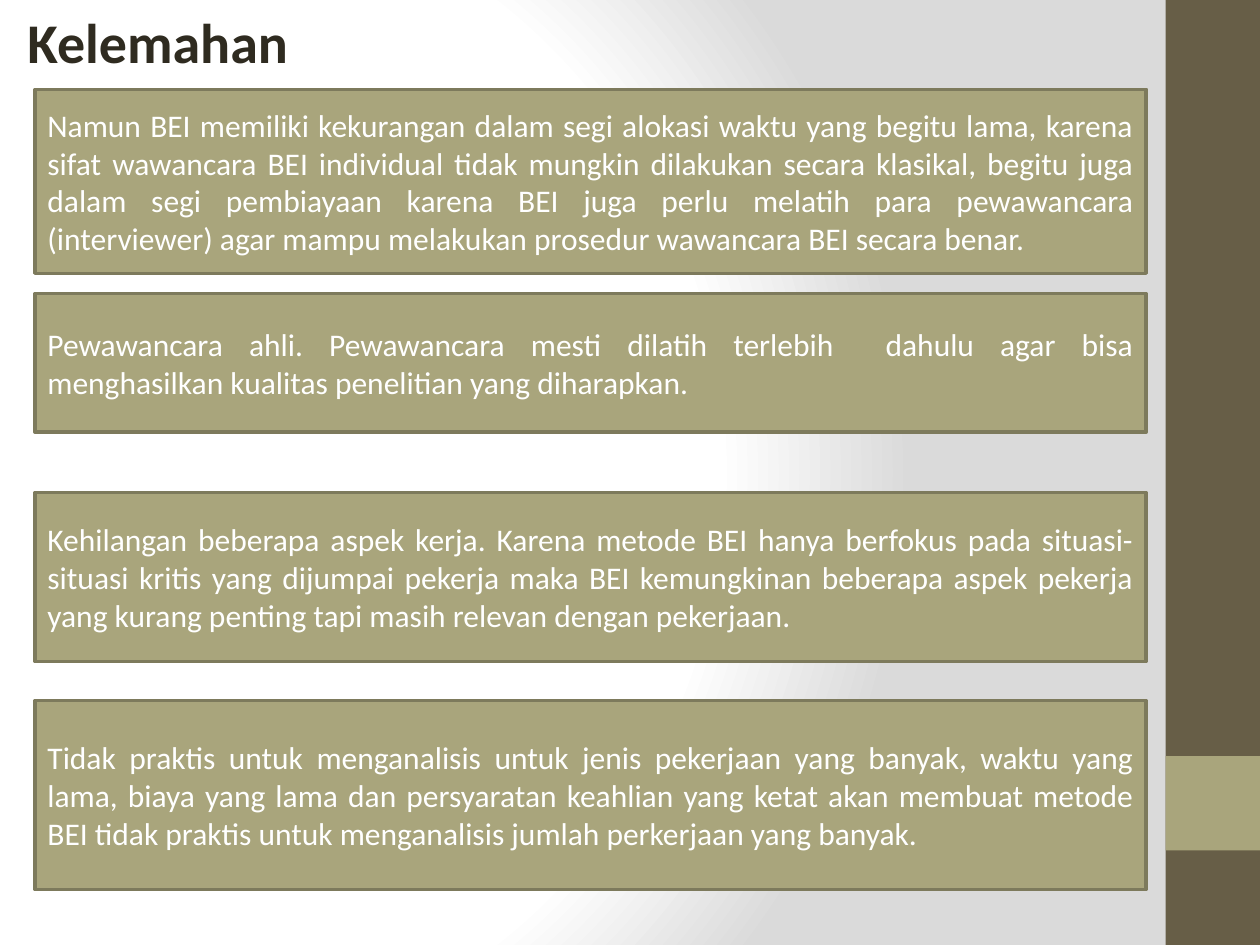
from pptx import Presentation
from pptx.dml.color import RGBColor
from pptx.enum.shapes import MSO_SHAPE
from pptx.enum.text import MSO_ANCHOR, PP_ALIGN
from pptx.oxml import parse_xml
from pptx.oxml.ns import nsdecls
from pptx.util import Pt

BROWN = RGBColor(0x67, 0x5E, 0x47)
OLIVE = RGBColor(0xA9, 0xA5, 0x7C)
OUTLINE = RGBColor(0x7D, 0x7A, 0x5C)
DARK = RGBColor(0x2F, 0x2B, 0x20)
WHITE = RGBColor(0xFF, 0xFF, 0xFF)
SILVER = RGBColor(0xDA, 0xDA, 0xDA)

WIDTH, HEIGHT = 720, 540
SIDEBAR = 54

# Top, height and text of each weakness
WEAKNESSES = [
    (51.1, 105.1,
     "Namun BEI memiliki kekurangan dalam segi alokasi waktu yang begitu lama, "
     "karena sifat wawancara BEI individual tidak mungkin dilakukan secara klasikal, "
     "begitu juga dalam segi pembiayaan karena BEI juga perlu melatih para pewawancara "
     "(interviewer) agar mampu melakukan prosedur wawancara BEI secara benar."),
    (167.8, 79.2,
     "Pewawancara ahli. Pewawancara mesti dilatih terlebih  dahulu agar bisa "
     "menghasilkan kualitas penelitian yang diharapkan."),
    (281.5, 96.5,
     "Kehilangan beberapa aspek kerja. Karena metode BEI hanya berfokus pada "
     "situasi-situasi kritis yang dijumpai pekerja maka BEI kemungkinan beberapa aspek "
     "pekerja yang kurang penting tapi masih relevan dengan pekerjaan."),
    (400.3, 108,
     "Tidak praktis untuk menganalisis untuk jenis pekerjaan yang banyak, waktu yang "
     "lama, biaya yang lama dan persyaratan keahlian yang ketat akan membuat metode BEI "
     "tidak praktis untuk menganalisis jumlah perkerjaan yang banyak."),
]


def write_text(shape, text, size=18, color=WHITE, bold=False,
               align=PP_ALIGN.LEFT, anchor=MSO_ANCHOR.TOP):
    frame = shape.text_frame
    frame.word_wrap = True
    frame.vertical_anchor = anchor
    para = frame.paragraphs[0]
    para.alignment = align
    span = para.add_run()
    span.text = text
    span.font.name = "Calibri"
    span.font.size = Pt(size)
    span.font.bold = bold
    span.font.color.rgb = color


def add_rectangle(page, box, fill, line=None):
    shape = page.shapes.add_shape(MSO_SHAPE.RECTANGLE, *map(Pt, box))
    shape.shadow.inherit = False
    shape.fill.solid()
    shape.fill.fore_color.rgb = fill
    if line is None:
        shape.line.fill.background()
    else:
        shape.line.color.rgb = line
        shape.line.width = Pt(2)
    return shape


def set_background(page):
    stops = "".join(
        f'<a:gs pos="{percent * 1000}"><a:srgbClr val="{color}"/></a:gs>'
        for percent, color in ((0, WHITE), (75, WHITE), (100, SILVER)))
    page.element.cSld.insert(0, parse_xml(
        f'<p:bg {nsdecls("p", "a")}><p:bgPr><a:gradFill rotWithShape="1">'
        f'<a:gsLst>{stops}</a:gsLst><a:path path="circle">'
        '<a:fillToRect l="20000" t="50000" r="100000" b="50000"/></a:path>'
        '</a:gradFill><a:effectLst/></p:bgPr></p:bg>'))


def add_sidebar(page, box):
    left, top, width, height = box
    add_rectangle(page, box, BROWN)
    # Square accent, one square above the bottom edge
    add_rectangle(page, (left, top + height - 2 * width, width, width), OLIVE)


def add_title(page, box):
    title = page.shapes.add_textbox(*map(Pt, box))
    write_text(title, "Kelemahan", size=32, color=DARK, bold=True)


def add_weaknesses(page, box):
    left, page_top, width, _ = box
    for top, height, text in WEAKNESSES:
        panel = add_rectangle(page, (left, page_top + top, width, height), OLIVE, OUTLINE)
        write_text(panel, text, align=PP_ALIGN.JUSTIFY, anchor=MSO_ANCHOR.MIDDLE)


def main():
    deck = Presentation()
    deck.slide_width, deck.slide_height = Pt(WIDTH), Pt(HEIGHT)
    page = deck.slides.add_slide(deck.slide_layouts[6])
    set_background(page)
    add_sidebar(page, (WIDTH - SIDEBAR, 0, SIDEBAR, HEIGHT))
    add_title(page, (8.6, 1, 640, 48))
    add_weaknesses(page, (20, 0, 635, HEIGHT))
    deck.save("out.pptx")


if __name__ == "__main__":
    main()
